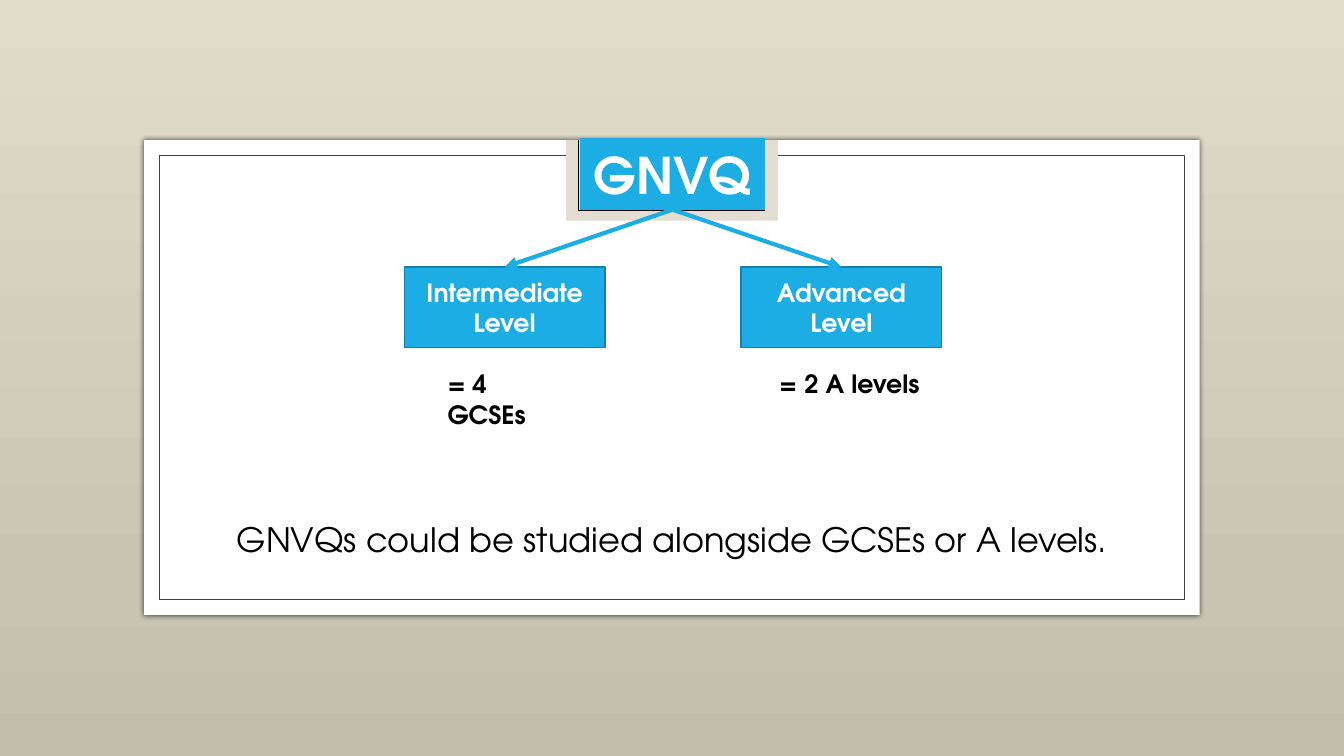
from copy import deepcopy

from lxml.etree import SubElement
from pptx import Presentation
from pptx.dml.color import RGBColor
from pptx.enum.shapes import MSO_CONNECTOR, MSO_SHAPE
from pptx.enum.text import MSO_ANCHOR, PP_ALIGN
from pptx.oxml.ns import qn
from pptx.util import Inches, Pt

FONT = "TeX Gyre Adventor"
BLUE, DARK_BLUE, WHITE, BLACK = "1CADE4", "1580A9", "FFFFFF", "000000"
BOTTOM, TOP = 2, 0


def rgb(value):
    return RGBColor.from_string(value)


def paint(sp, fill=None, line=None, width=1):
    if fill:
        sp.fill.solid()
        sp.fill.fore_color.rgb = rgb(fill)
    else:
        sp.fill.background()
    if line:
        sp.line.color.rgb = rgb(line)
        sp.line.width = Pt(width)
    else:
        sp.line.fill.background()


def add_rect(slide, x, y, w, h, fill=None, line=None, width=1):
    sp = slide.shapes.add_shape(
        MSO_SHAPE.RECTANGLE, Inches(x), Inches(y), Inches(w), Inches(h))
    sp.shadow.inherit = False
    paint(sp, fill, line, width)
    return sp


def add_line(slide, x1, y1, x2, y2, color, width):
    line = slide.shapes.add_connector(
        MSO_CONNECTOR.STRAIGHT, Inches(x1), Inches(y1), Inches(x2), Inches(y2))
    line.line.color.rgb = rgb(color)
    line.line.width = Pt(width)
    SubElement(line._element.spPr, qn("a:effectLst"))
    return line


def set_text(sp, text, size, color, bold=False, align=PP_ALIGN.CENTER):
    tf = sp.text_frame
    tf.word_wrap = True
    tf.text = text
    for p in tf.paragraphs:
        p.alignment = align
        for r in p.runs:
            r.font.name = FONT
            r.font.size = Pt(size)
            r.font.bold = bold
            r.font.color.rgb = rgb(color)


def add_text(slide, x, y, w, h, text, size, **style):
    box = slide.shapes.add_textbox(Inches(x), Inches(y), Inches(w), Inches(h))
    set_text(box, text, size, BLACK, **style)


def add_background(slide, stops):
    fill = slide.background.fill
    fill.gradient()
    fill.gradient_angle = 270
    gs_list = next(slide.element.iter(qn("a:gsLst")))
    gs_list.append(deepcopy(gs_list[0]))
    for stop, (position, color) in zip(fill.gradient_stops, stops):
        stop.position = position
        stop.color.rgb = rgb(color)


def add_frame(slide, x, y, w, h):
    # White card with a soft shadow
    card = add_rect(slide, x, y, w, h, WHITE)
    shadow = SubElement(card._element.spPr.find(qn("a:effectLst")),
                        qn("a:outerShdw"), blurRad=str(Pt(4)), dist="0", dir="0")
    color = SubElement(shadow, qn("a:srgbClr"), val=BLACK)
    SubElement(color, qn("a:alpha"), val="66000")

    # Inner border
    gap = 0.15
    add_rect(slide, x + gap, y + gap, w - 2 * gap, h - 2 * gap,
             line="404040", width=0.5)

    # Tab behind the title, outlined on three sides
    tab_w, tab_h = 2.1, 0.8
    tab_x = x + (w - tab_w) / 2
    add_rect(slide, tab_x, y, tab_w, tab_h, "E3DED1")
    left, right, low = tab_x + 0.12, tab_x + tab_w - 0.13, y + 0.7
    for ends in ((left, y, left, low), (right, y, right, low),
                 (left, low, right, low)):
        add_line(slide, *ends, BLACK, 0.5)


def add_title(slide, x, y, w, h):
    title = slide.shapes.title
    title.left, title.top = Inches(x), Inches(y)
    title.width, title.height = Inches(w), Inches(h)
    paint(title, BLUE, BLUE)
    set_text(title, "GNVQ", 36, WHITE, bold=True)
    title.text_frame.vertical_anchor = MSO_ANCHOR.MIDDLE
    # Bring the title in front of the frame
    slide.shapes._spTree.append(title._element)
    return title


def add_level(slide, title, x, y, w, h, name, note, note_x, note_w):
    box = add_rect(slide, x, y, w, h, BLUE, DARK_BLUE)
    set_text(box, name, 18, WHITE, bold=True)
    box.text_frame.vertical_anchor = MSO_ANCHOR.MIDDLE

    # Arrow from the title down to the level
    arrow = add_line(slide, x, y, x, y, BLUE, 3)
    arrow.begin_connect(title, BOTTOM)
    arrow.end_connect(box, TOP)
    SubElement(arrow.line._get_or_add_ln(), qn("a:tailEnd"), type="triangle")

    # What the level is worth
    add_text(slide, x + note_x, y + h + 0.16, note_w, 0.4, note, 18,
             bold=True, align=PP_ALIGN.LEFT)


def main():
    prs = Presentation()
    prs.slide_width, prs.slide_height = Inches(13.33), Inches(7.5)
    slide = prs.slides.add_slide(prs.slide_layouts[5])

    add_background(slide, ((0, "E2DCCA"), (0.77, "CAC4B2"), (1, "C2BCAC")))
    add_frame(slide, 1.43, 1.39, 10.47, 4.71)
    title = add_title(slide, 5.76, 1.38, 1.82, 0.7)
    add_level(slide, title, 4.01, 2.65, 1.99, 0.8,
              "Intermediate\nLevel", "= 4 GCSEs", 0.33, 1.42)
    add_level(slide, title, 7.35, 2.65, 1.99, 0.8,
              "Advanced\vLevel", "= 2 A levels", 0.28, 1.65)
    add_text(slide, 2.2, 5.1, 8.93, 0.5,
             "GNVQs could be studied alongside GCSEs or A levels.", 24)
    prs.save("out.pptx")


if __name__ == "__main__":
    main()
